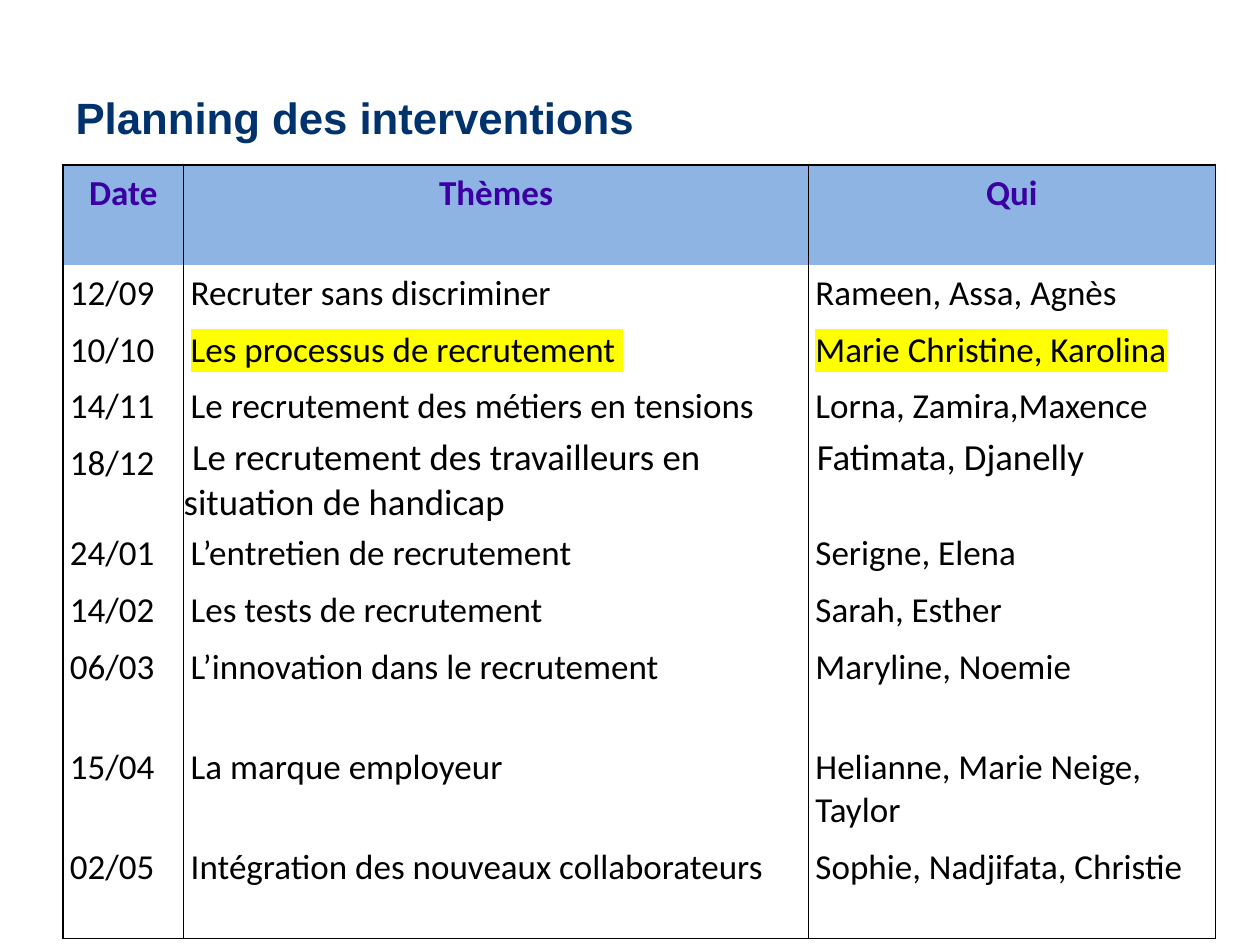
from lxml.etree import SubElement
from pptx import Presentation
from pptx.dml.color import RGBColor
from pptx.enum.text import MSO_ANCHOR, PP_ALIGN as ALIGN
from pptx.oxml.ns import qn
from pptx.util import Pt

BLACK, NAVY, PURPLE = "000000", "00326E", "3B00A4"
HEADER_BLUE, YELLOW = "8EB4E3", "FFFF00"

HEADINGS = ["Date", "Thèmes", "Qui"]
SESSIONS = [
    ("12/09", "Recruter sans discriminer", "Rameen, Assa, Agnès"),
    ("10/10", "Les processus de recrutement ", "Marie Christine, Karolina"),
    ("14/11", "Le recrutement des métiers en tensions", "Lorna, Zamira,Maxence"),
    ("18/12", "Le recrutement des travailleurs en situation de handicap",
     "Fatimata, Djanelly"),
    ("24/01", "L’entretien de recrutement", "Serigne, Elena"),
    ("14/02", "Les tests de recrutement", "Sarah, Esther"),
    ("06/03", "L’innovation dans le recrutement", "Maryline, Noemie"),
    ("15/04", "La marque employeur", "Helianne, Marie Neige, Taylor"),
    ("02/05", "Intégration des nouveaux collaborateurs",
     "Sophie, Nadjifata, Christie"),
]
COL_WIDTHS = [69, 357, 232.5]
LOW, TALL = 32.5, 57
ROW_HEIGHTS = [TALL, LOW, LOW, LOW, 51.4, LOW, LOW, TALL, TALL, TALL]
HIGHLIGHTED, FLUSH = "10/10", "18/12"


def rgb(value):
    return RGBColor.from_string(value)


def set_font(font, color, **formats):
    for name, value in formats.items():
        setattr(font, name, value)
    font.color.rgb = rgb(color)


def add_title(s, text):
    title = s.shapes.title
    title.left, title.top, title.width, title.height = map(Pt, (36, 21.6, 648, 90))
    tf = title.text_frame
    tf.text, tf.vertical_anchor = text, MSO_ANCHOR.MIDDLE
    p = tf.paragraphs[0]
    p.alignment = ALIGN.LEFT
    set_font(p.runs[0].font, NAVY, name="Arial", size=Pt(25), bold=True)


def highlight(run):
    mark = SubElement(run._r.rPr, qn("a:highlight"))
    SubElement(mark, qn("a:srgbClr"), val=YELLOW)
    run._r.rPr.find(qn("a:solidFill")).addnext(mark)


def set_borders(cell, sides):
    """Draw the given sides in black and hide the others."""
    tc_pr = cell._tc.get_or_add_tcPr()
    for i, side in enumerate("LRTB"):
        line = SubElement(tc_pr, qn(f"a:ln{side}"), w=str(Pt(1)))
        if side in sides:
            fill = SubElement(line, qn("a:solidFill"))
            SubElement(fill, qn("a:srgbClr"), val=BLACK)
        else:
            SubElement(line, qn("a:noFill"))
        tc_pr.insert(i, line)


def fill_cell(cell, text, color=BLACK, size=20, margin=4, bold=False,
              align=ALIGN.LEFT, fill=None):
    for side in ("left", "right", "top", "bottom"):
        setattr(cell, f"margin_{side}", Pt(margin))
    cell.text = text
    p = cell.text_frame.paragraphs[0]
    p.alignment = align
    set_font(p.runs[0].font, color, name="Calibri", size=Pt(size), bold=bold)
    if fill:
        cell.fill.solid()
        cell.fill.fore_color.rgb = rgb(fill)
    else:
        cell.fill.background()
    return p


def add_schedule(s):
    frame = s.shapes.add_table(len(ROW_HEIGHTS), len(COL_WIDTHS), Pt(36), Pt(94.3),
                               Pt(sum(COL_WIDTHS)), Pt(sum(ROW_HEIGHTS)))
    table = frame.table
    table.first_row = table.horz_banding = False
    for col, width in zip(table.columns, COL_WIDTHS):
        col.width = Pt(width)
    for row, height in zip(table.rows, ROW_HEIGHTS):
        row.height = Pt(height)

    # Header row
    for cell, heading in zip(table.rows[0].cells, HEADINGS):
        fill_cell(cell, heading, PURPLE, bold=True, align=ALIGN.CENTER,
                  fill=HEADER_BLUE)
        set_borders(cell, "LRT")

    # One row per session
    for i, session in enumerate(SESSIONS, 1):
        for j, text in enumerate(session):
            cell = table.cell(i, j)
            if session[0] == FLUSH and j:
                p = fill_cell(cell, text, size=21, margin=0)
                p._p.get_or_add_pPr().set("indent", str(Pt(4.75)))
            else:
                p = fill_cell(cell, text)
            if session[0] == HIGHLIGHTED and j:
                highlight(p.runs[0])
            set_borders(cell, "LRB" if i == len(SESSIONS) else "LR")


def main():
    prs = Presentation()
    prs.slide_width, prs.slide_height = Pt(720), Pt(540)
    s = prs.slides.add_slide(prs.slide_layouts[5])
    add_title(s, "Planning des interventions")
    add_schedule(s)
    prs.save("out.pptx")


if __name__ == "__main__":
    main()
